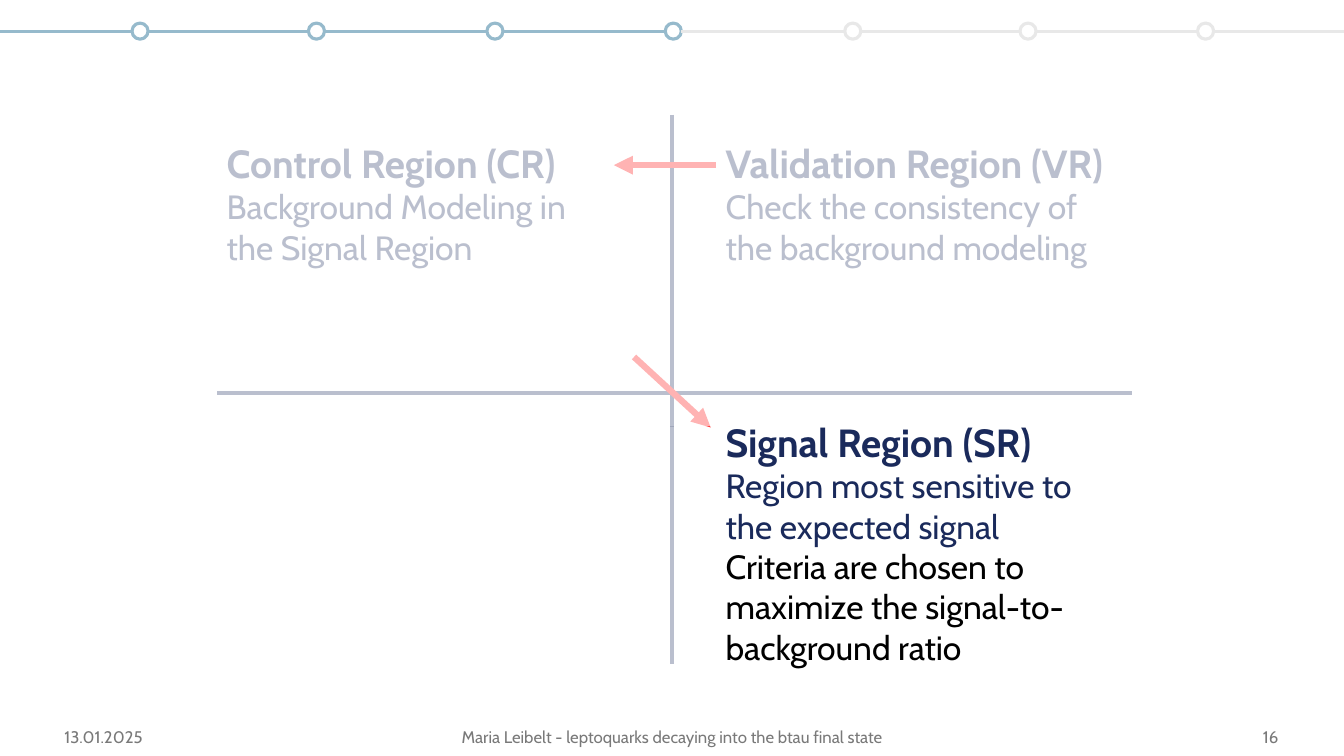
from typing import NamedTuple

from lxml.etree import SubElement
from pptx import Presentation
from pptx.dml.color import RGBColor
from pptx.enum.shapes import MSO_CONNECTOR, MSO_SHAPE
from pptx.enum.text import MSO_ANCHOR, PP_ALIGN
from pptx.oxml.ns import qn
from pptx.util import Pt

FONT = "Cabin"
NAVY, BLACK, WHITE, RED = "1A2A5B", "000000", "FFFFFF", "FF0000"
DONE, PENDING, FOOTER_GREY = "96BACC", "E8E8E8", "797979"


class Box(NamedTuple):
    left: float
    top: float
    width: float
    height: float


class Stroke(NamedTuple):
    start: tuple[float, float]
    end: tuple[float, float]
    color: str
    weight: float
    arrow: bool = False


class Region(NamedTuple):
    box: Box
    title: str
    description: str
    remark: str = ""


class Footer(NamedTuple):
    box: Box
    text: str
    align: PP_ALIGN


PAGE_WIDTH, PAGE_HEIGHT = 960, 540

# Progress bar: left edge of each marker
MARKER_LEFTS = [94.3, 220.3, 347.8, 475.2, 603.4, 728.6, 855.4]
MARKER_TOP, MARKER_SIZE = 16.5, 11.5
TRACK_Y = MARKER_TOP + MARKER_SIZE / 2
DONE_COUNT = 4

AXES = [
    Stroke((480.2, 82), (480.2, 474.5), NAVY, 3),
    Stroke((808.5, 280.8), (154.8, 280.8), NAVY, 3),
]
ARROWS = [
    Stroke((511.2, 118), (438.5, 118), RED, 4.5, True),
    Stroke((452.9, 255), (507.6, 305.3), RED, 4.5, True),
]
REGIONS = [
    Region(Box(154.8, 95.8, 293.8, 99.4), "Control Region (CR)",
           "Background Modeling in the Signal Region"),
    Region(Box(511.2, 95.8, 296.6, 133.2), "Validation Region (VR)",
           "Check the consistency of the background modeling"),
    Region(Box(511.2, 295.2, 296.6, 216), "Signal Region (SR)",
           "Region most sensitive to the expected signal",
           "Criteria are chosen to maximize the signal-to-background ratio"),
]
# Veils fade every quadrant except the signal region
VEILS = [Box(105.8, 44.6, 718.6, 260), Box(233.3, 304.6, 260, 180.7)]
FOOTERS = [
    Footer(Box(38.9, 512, 243.4, 28.8), "13.01.2025", PP_ALIGN.LEFT),
    Footer(Box(318.2, 512, 324, 28.8),
           "Maria Leibelt - leptoquarks decaying into the btau final state",
           PP_ALIGN.CENTER),
    Footer(Box(678.2, 512, 242, 28.8), "16", PP_ALIGN.RIGHT),
]


def rgb(color: str) -> RGBColor:
    return RGBColor.from_string(color)


def style_font(font, size: float, color: str, bold: bool = False) -> None:
    font.name, font.size, font.bold = FONT, Pt(size), bold
    font.color.rgb = rgb(color)


def draw_stroke(page, stroke: Stroke) -> None:
    ends = [Pt(value) for value in (*stroke.start, *stroke.end)]
    line = page.shapes.add_connector(MSO_CONNECTOR.STRAIGHT, *ends)
    line.line.color.rgb = rgb(stroke.color)
    line.line.width = Pt(stroke.weight)
    if stroke.arrow:
        SubElement(line.line._get_or_add_ln(), qn("a:tailEnd"), type="triangle")
    SubElement(line._element.spPr, qn("a:effectLst"))


def draw_shape(page, kind: MSO_SHAPE, box: Box):
    shape = page.shapes.add_shape(kind, *[Pt(value) for value in box])
    shape.shadow.inherit = False
    return shape


def draw_marker(page, left: float, color: str) -> None:
    box = Box(left, MARKER_TOP, MARKER_SIZE, MARKER_SIZE)
    marker = draw_shape(page, MSO_SHAPE.OVAL, box)
    marker.fill.background()
    marker.line.color.rgb = rgb(color)
    marker.line.width = Pt(2.25)


def draw_progress(page) -> None:
    starts = [0] + [left + MARKER_SIZE for left in MARKER_LEFTS]
    ends = MARKER_LEFTS + [PAGE_WIDTH]
    for index, (start, end) in enumerate(zip(starts, ends)):
        color = DONE if index < DONE_COUNT else PENDING
        draw_stroke(page, Stroke((start, TRACK_Y), (end, TRACK_Y), color, 2.25))
        if index < len(MARKER_LEFTS):
            draw_marker(page, end, color)


def draw_veil(page, box: Box) -> None:
    veil = draw_shape(page, MSO_SHAPE.RECTANGLE, box)
    veil.fill.solid()
    veil.fill.fore_color.rgb = rgb(WHITE)
    white = veil._element.spPr.find(".//" + qn("a:srgbClr"))
    SubElement(white, qn("a:alpha"), val="70000")
    veil.line.fill.background()


def add_frame(page, box: Box):
    frame = page.shapes.add_textbox(*[Pt(value) for value in box]).text_frame
    frame.word_wrap = True
    return frame


def draw_region(page, region: Region) -> None:
    frame = add_frame(page, region.box)
    title = frame.paragraphs[0]
    title.text = region.title
    style_font(title.font, 28, NAVY, bold=True)
    body = frame.add_paragraph()
    style_font(body.font, 24, NAVY)
    body.add_run().text = region.description
    if region.remark:
        body.add_line_break()
        span = body.add_run()
        span.text = region.remark
        span.font.color.rgb = rgb(BLACK)


def draw_footer(page, footer: Footer) -> None:
    frame = add_frame(page, footer.box)
    frame.vertical_anchor = MSO_ANCHOR.MIDDLE
    para = frame.paragraphs[0]
    para.text = footer.text
    para.alignment = footer.align
    style_font(para.font, 12, FOOTER_GREY)


def main() -> None:
    deck = Presentation()
    deck.slide_width, deck.slide_height = Pt(PAGE_WIDTH), Pt(PAGE_HEIGHT)
    page = deck.slides.add_slide(deck.slide_layouts[6])

    # Header and footer
    draw_progress(page)
    for footer in FOOTERS:
        draw_footer(page, footer)

    # Quadrants, with the arrows on top
    for axis in AXES:
        draw_stroke(page, axis)
    for region in REGIONS:
        draw_region(page, region)
    for arrow in ARROWS:
        draw_stroke(page, arrow)

    # Fading
    for veil in VEILS:
        draw_veil(page, veil)

    deck.save("out.pptx")


if __name__ == "__main__":
    main()
